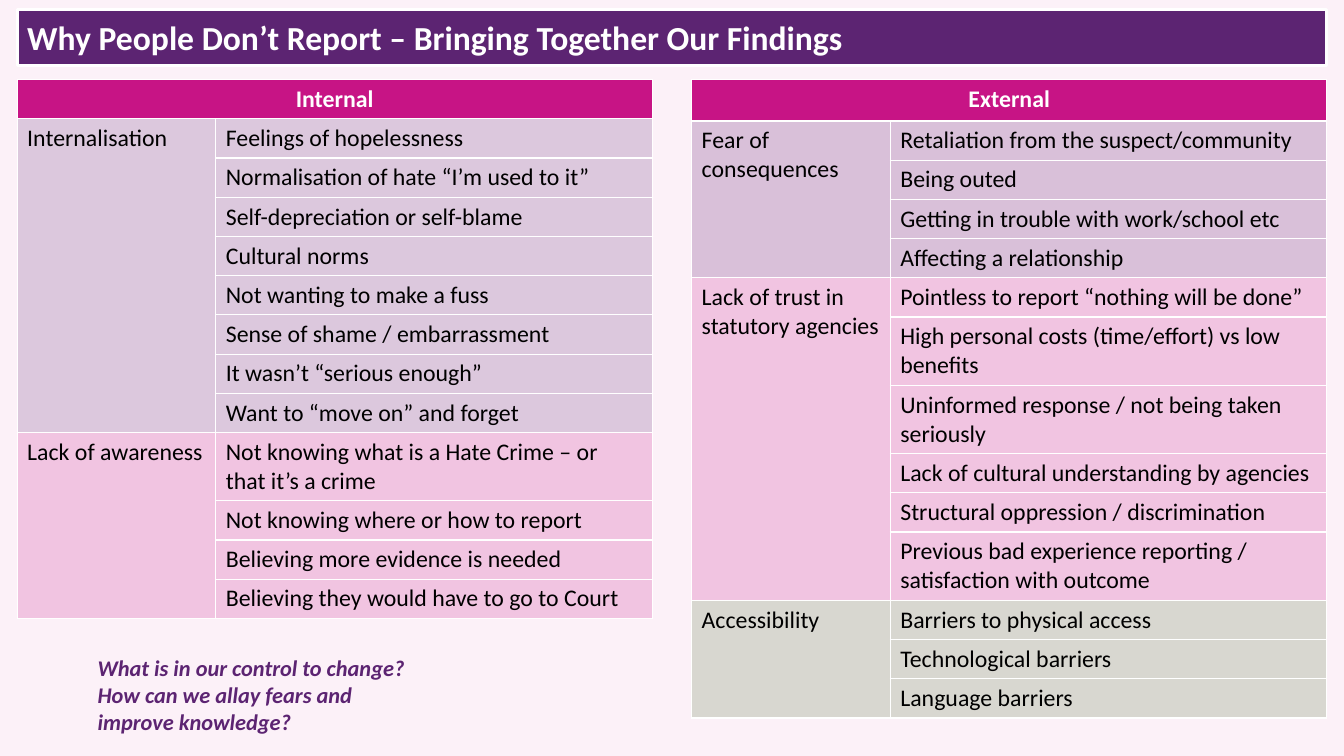
from lxml import etree
from pptx import Presentation
from pptx import util as u
from pptx.dml.color import RGBColor
from pptx.enum import text
from pptx.oxml.ns import qn

PURPLE, PINK, GREEN, LILAC = "5C2472", "C71485", "4B7131", "D9C0D9"
WHITE, BLACK, BLUSH = "FFFFFF", "000000", "FCF1F8"

INTERNAL = [
    ("Internalisation", PURPLE, 20, [
        "Feelings of hopelessness",
        "Normalisation of hate “I’m used to it”",
        "Self-depreciation or self-blame",
        "Cultural norms",
        "Not wanting to make a fuss",
        "Sense of shame / embarrassment",
        "It wasn’t “serious enough”",
        "Want to “move on” and forget",
    ]),
    ("Lack of awareness", PINK, 20, [
        "Not knowing what is a Hate Crime – or that it’s a crime",
        "Not knowing where or how to report",
        "Believing more evidence is needed",
        "Believing they would have to go to Court",
    ]),
]
EXTERNAL = [
    ("Fear of consequences", LILAC, 100, [
        "Retaliation from the suspect/community",
        "Being outed",
        "Getting in trouble with work/school etc",
        "Affecting a relationship",
    ]),
    ("Lack of trust in statutory agencies", PINK, 20, [
        "Pointless to report “nothing will be done”",
        "High personal costs (time/effort) vs low benefits",
        "Uninformed response / not being taken seriously",
        "Lack of cultural understanding by agencies",
        "Structural oppression / discrimination",
        "Previous bad experience reporting / satisfaction with outcome",
    ]),
    ("Accessibility", GREEN, 20, [
        "Barriers to physical access",
        "Technological barriers",
        "Language barriers",
    ]),
]


def paint(fill, color, opacity=100):
    fill.solid()
    fill.fore_color.rgb = RGBColor.from_string(color)
    if opacity < 100:
        node = fill._xPr.find(qn("a:solidFill"))[0]
        etree.SubElement(node, qn("a:alpha"), val=str(opacity * 1000))


def write(frame, words, size=17, color=BLACK, bold=False, italic=False,
          align=text.PP_ALIGN.LEFT):
    para = frame.paragraphs[0]
    para.alignment = align
    span = para.add_run()
    span.text = words
    span.font.name = "Calibri"
    span.font.size = u.Pt(size)
    span.font.bold = bold
    span.font.italic = italic
    span.font.color.rgb = RGBColor.from_string(color)


def add_borders(cell, color=WHITE, width=1):
    properties = cell._tc.get_or_add_tcPr()
    for side in ("lnL", "lnR", "lnT", "lnB"):
        line = etree.SubElement(properties, qn("a:" + side), w=str(u.Pt(width)))
        fill = etree.SubElement(line, qn("a:solidFill"))
        etree.SubElement(fill, qn("a:srgbClr"), val=color)


class FindingsSlide:
    columns = (1.97, 4.33)
    row_height = 0.35

    def __init__(self, deck):
        self.page = deck.slides.add_slide(deck.slide_layouts[5])
        paint(self.page.background.fill, BLUSH)

    def title(self, words, left, top, width, height):
        box = self.page.shapes.title
        box.left, box.top = u.Inches(left), u.Inches(top)
        box.width, box.height = u.Inches(width), u.Inches(height)
        outline = etree.SubElement(box._element.spPr, qn("a:prstGeom"), prst="roundRect")
        etree.SubElement(outline, qn("a:avLst"))
        paint(box.fill, PURPLE)
        paint(box.line.fill, WHITE)
        box.line.width = u.Pt(2.25)
        frame = box.text_frame
        frame.auto_size = text.MSO_AUTO_SIZE.NONE
        frame.vertical_anchor = text.MSO_ANCHOR.MIDDLE
        write(frame, words, size=24, color=WHITE, bold=True)

    def table(self, heading, groups, left, top, height, header_height):
        count = 1 + sum(len(reasons) for _, _, _, reasons in groups)
        holder = self.page.shapes.add_table(
            count, 2, u.Inches(left), u.Inches(top),
            u.Inches(sum(self.columns)), u.Inches(height))
        table = holder.table
        table.horz_banding = False
        for column, width in zip(table.columns, self.columns):
            column.width = u.Inches(width)
        for row in table.rows:
            row.height = u.Inches(self.row_height)
        table.rows[0].height = u.Inches(header_height)
        holder.height = u.Inches(height)
        for cell in table.iter_cells():
            add_borders(cell)

        table.cell(0, 0).merge(table.cell(0, 1))
        for column in range(2):
            paint(table.cell(0, column).fill, PINK)
        write(table.cell(0, 0).text_frame, heading, color=WHITE, bold=True,
              align=text.PP_ALIGN.CENTER)

        start = 1
        for cause, color, opacity, reasons in groups:
            table.cell(start, 0).merge(table.cell(start + len(reasons) - 1, 0))
            write(table.cell(start, 0).text_frame, cause)
            for row, reason in enumerate(reasons, start):
                for column in range(2):
                    paint(table.cell(row, column).fill, color, opacity)
                write(table.cell(row, 1).text_frame, reason)
            start += len(reasons)

    def note(self, words, left, top, width, height):
        box = self.page.shapes.add_textbox(
            u.Inches(left), u.Inches(top), u.Inches(width), u.Inches(height))
        box.text_frame.word_wrap = True
        write(box.text_frame, words, size=16, color=PURPLE, bold=True, italic=True)


def main():
    deck = Presentation()
    deck.slide_width, deck.slide_height = u.Inches(13.33), u.Inches(7.5)
    slide = FindingsSlide(deck)
    slide.title("Why People Don’t Report – Bringing Together Our Findings",
                0.17, 0.09, 12.99, 0.56)
    slide.table("Internal", INTERNAL, 0.17, 0.79, 5.27, 0.34)
    slide.table("External", EXTERNAL, 6.86, 0.79, 6.24, 0.41)
    slide.note("What is in our control to change? How can we allay fears and "
               "improve knowledge?", 0.87, 6.44, 3.36, 0.91)
    deck.save("out.pptx")


if __name__ == "__main__":
    main()
